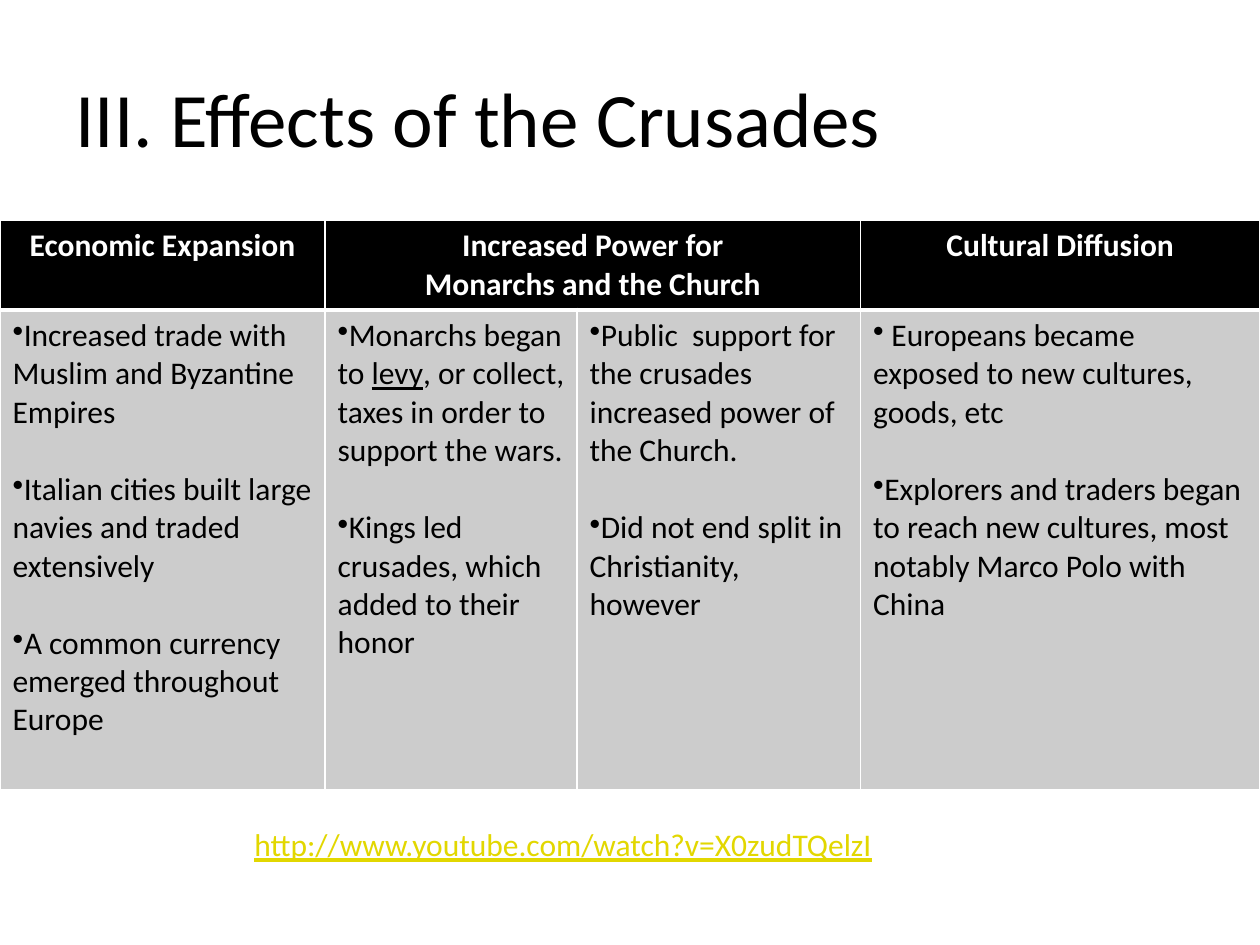
import pptx
import pptx.util
import pptx.dml.color
import pptx.enum.text
import pptx.oxml.ns
from lxml import etree

Inches, Pt = pptx.util.Inches, pptx.util.Pt
ALIGN = pptx.enum.text.PP_ALIGN
COLORS = {"text": "000000", "header": "000000", "header_text": "FFFFFF",
          "body": "CCCCCC", "border": "FFFFFF", "link": "E2D700"}


def rgb(name):
    return pptx.dml.color.RGBColor.from_string(COLORS[name])


def format_font(font, color, **values):
    font.color.rgb = rgb(color)
    for name, value in ({"name": "Calibri", "size": Pt(18)} | values).items():
        setattr(font, name, value)


presentation = pptx.Presentation()
presentation.slide_width, presentation.slide_height = Inches(10), Inches(7.5)
slide = presentation.slides.add_slide(presentation.slide_layouts[5])

# Title
title = slide.shapes.title
title.left, title.top = Inches(0.5), Inches(0.3)
title.width, title.height = Inches(9), Inches(1.25)
title.text_frame.text = "III. Effects of the Crusades"
paragraph = title.text_frame.paragraphs[0]
paragraph.alignment = ALIGN.LEFT
format_font(paragraph.runs[0].font, "text", size=Pt(44))

# Table grid
column_widths = [2.58, 2, 2.25, 3.17]
row_heights = [0.7, 3.81]
table = slide.shapes.add_table(
    len(row_heights), len(column_widths), Inches(0), Inches(1.75),
    Inches(sum(column_widths)), Inches(sum(row_heights))).table
for column, width in zip(table.columns, column_widths):
    column.width = Inches(width)
for row, height in zip(table.rows, row_heights):
    row.height = Inches(height)
table.cell(0, 1).merge(table.cell(0, 2))

# Cell borders and fills, with a thicker line below the header
for row_index, row in enumerate(table.rows):
    thick_side = "lnB" if row_index == 0 else "lnT"
    for cell in row.cells:
        properties = cell._tc.get_or_add_tcPr()
        for side in ("lnL", "lnR", "lnT", "lnB"):
            line = etree.SubElement(properties, pptx.oxml.ns.qn(f"a:{side}"),
                                    w=str(Pt(3 if side == thick_side else 1)))
            fill = etree.SubElement(line, pptx.oxml.ns.qn("a:solidFill"))
            etree.SubElement(fill, pptx.oxml.ns.qn("a:srgbClr"), val=COLORS["border"])
        cell.fill.solid()
        cell.fill.fore_color.rgb = rgb("body" if row_index else "header")

# Header text
headers = {0: "Economic Expansion",
           1: "Increased Power for\nMonarchs and the Church",
           3: "Cultural Diffusion"}
for column_index, text in headers.items():
    text_frame = table.cell(0, column_index).text_frame
    text_frame.text = text
    for paragraph in text_frame.paragraphs:
        paragraph.alignment = ALIGN.CENTER
        format_font(paragraph.runs[0].font, "header_text", bold=True)

# Bulleted effects; text between underscores is underlined
effects = [
    ["Increased trade with Muslim and Byzantine Empires",
     "Italian cities built large navies and traded extensively",
     "A common currency emerged throughout Europe"],
    ["Monarchs began to _levy_, or collect, taxes in order to support the wars.",
     "Kings led crusades, which added to their honor"],
    ["Public  support for the crusades increased power of the Church.",
     "Did not end split in Christianity, however"],
    [" Europeans became exposed to new cultures, goods, etc",
     "Explorers and traders began to reach new cultures, most notably "
     "Marco Polo with China"],
]
for column_index, items in enumerate(effects):
    text_frame = table.cell(1, column_index).text_frame
    for item_index, item in enumerate(items):
        if item_index == 0:
            paragraph = text_frame.paragraphs[0]
        else:
            paragraph = text_frame.add_paragraph()
            paragraph.space_before = Pt(22)
        etree.SubElement(paragraph._p.get_or_add_pPr(),
                         pptx.oxml.ns.qn("a:buChar"), char="•")
        for part_index, part in enumerate(item.split("_")):
            run = paragraph.add_run()
            run.text = part
            format_font(run.font, "text", bold=False, underline=part_index % 2 == 1)

# Web address
address = slide.shapes.add_textbox(Inches(1.92), Inches(6.5), Inches(5.58), Inches(0.4))
address.text_frame.word_wrap = True
address.text_frame.text = "http://www.youtube.com/watch?v=X0zudTQelzI"
format_font(address.text_frame.paragraphs[0].runs[0].font, "link", underline=True)

presentation.save("out.pptx")
